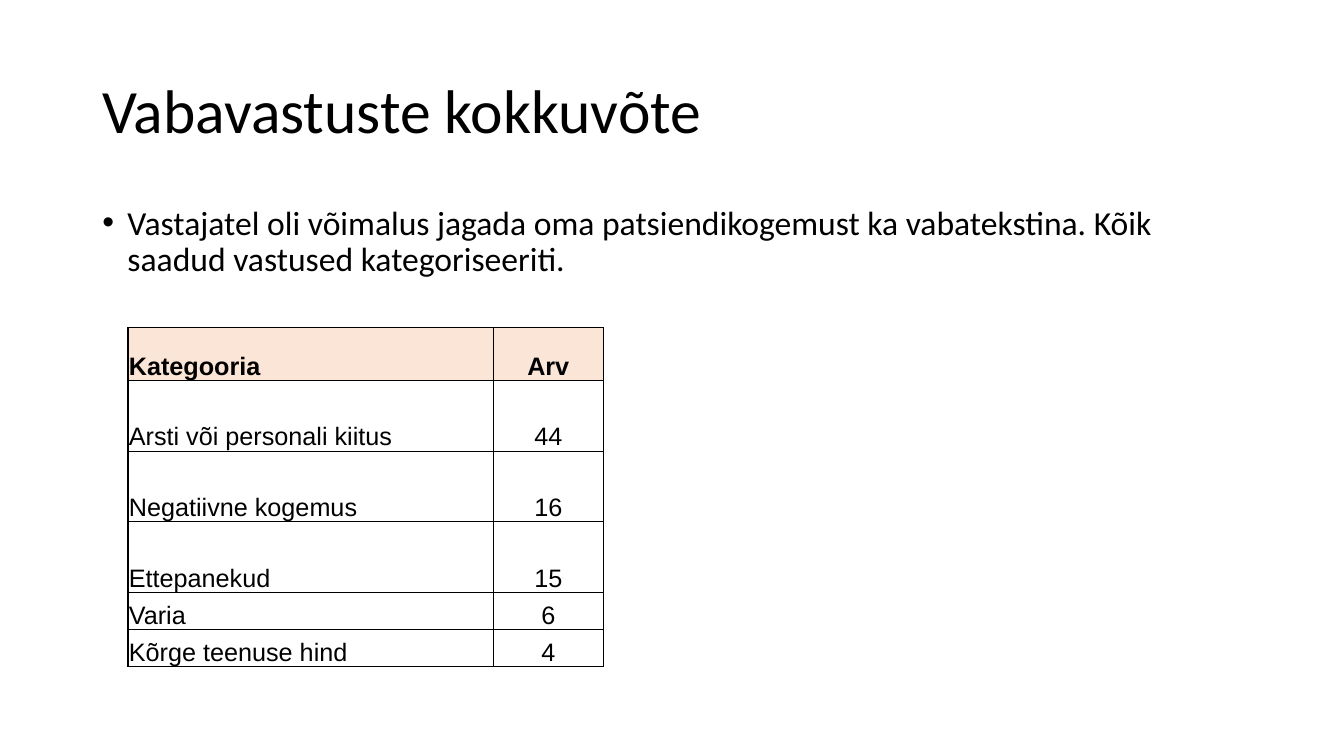
from lxml import etree
from pptx import Presentation
from pptx.dml.color import RGBColor
from pptx.enum.text import MSO_ANCHOR, PP_ALIGN
from pptx.oxml.ns import qn
from pptx.util import Pt

LEFT, CENTER = PP_ALIGN.LEFT, PP_ALIGN.CENTER
TOP, MIDDLE, BOTTOM = MSO_ANCHOR.TOP, MSO_ANCHOR.MIDDLE, MSO_ANCHOR.BOTTOM

COLORS = {"text": "000000", "border": "000000", "header": "FBE5D6"}
ROWS = [
    ("Kategooria", "Arv"),
    ("Arsti või personali kiitus", "44"),
    ("Negatiivne kogemus", "16"),
    ("Ettepanekud", "15"),
    ("Varia", "6"),
    ("Kõrge teenuse hind", "4"),
]
COLUMN_WIDTHS = [261, 78.5]
ROW_HEIGHTS = [38, 50.4, 50.4, 50.4, 26.5, 26.5]


class SlideBuilder:
    text_font = "Calibri"
    table_font = "Arial"
    table_size = 18

    def __init__(self, prs):
        self.s = prs.slides.add_slide(prs.slide_layouts[6])

    def style(self, p, font, size, bold=False):
        for r in p.runs:
            r.font.name = font
            r.font.size = Pt(size)
            r.font.bold = bold
            r.font.color.rgb = RGBColor.from_string(COLORS["text"])

    def text(self, text, left, top, width, height, size, anchor=TOP, bullet=False):
        sp = self.s.shapes.add_textbox(Pt(left), Pt(top), Pt(width), Pt(height))
        tf = sp.text_frame
        tf.word_wrap = True
        tf.vertical_anchor = anchor
        tf.text = text
        p = tf.paragraphs[0]
        if bullet:
            self.bullet(p)
        p.line_spacing = 0.9
        self.style(p, self.text_font, size)

    def bullet(self, p):
        pPr = p._p.get_or_add_pPr()
        pPr.set("marL", str(Pt(18)))
        pPr.set("indent", str(-Pt(18)))
        etree.SubElement(pPr, qn("a:buFont")).set("typeface", "Arial")
        etree.SubElement(pPr, qn("a:buChar")).set("char", "•")

    def table(self, rows, left, top, widths, heights):
        frame = self.s.shapes.add_table(
            len(rows), len(widths), Pt(left), Pt(top), Pt(sum(widths)), Pt(sum(heights)))
        table = frame.table
        for column, width in zip(table.columns, widths):
            column.width = Pt(width)
        for i, (values, height) in enumerate(zip(rows, heights)):
            table.rows[i].height = Pt(height)
            for j, value in enumerate(values):
                self.cell(table.cell(i, j), value, CENTER if j else LEFT, i == 0)

    def cell(self, cell, value, align, header):
        cell.margin_left = cell.margin_right = cell.margin_top = Pt(0.7)
        cell.margin_bottom = 0
        cell.vertical_anchor = BOTTOM
        self.borders(cell)
        if header:
            cell.fill.solid()
            cell.fill.fore_color.rgb = RGBColor.from_string(COLORS["header"])
        else:
            cell.fill.background()
        cell.text_frame.text = value
        p = cell.text_frame.paragraphs[0]
        p.alignment = align
        self.style(p, self.table_font, self.table_size, header)

    def borders(self, cell):
        tcPr = cell._tc.get_or_add_tcPr()
        for side in ("L", "R", "T", "B"):
            line = etree.SubElement(tcPr, qn("a:ln" + side))
            line.set("w", str(Pt(1)))
            fill = etree.SubElement(line, qn("a:solidFill"))
            etree.SubElement(fill, qn("a:srgbClr")).set("val", COLORS["border"])


def main():
    prs = Presentation()
    prs.slide_width, prs.slide_height = Pt(960), Pt(540)
    slide = SlideBuilder(prs)
    slide.text("Vabavastuste kokkuvõte", 66, 28.75, 828, 104.4, 44, anchor=MIDDLE)
    slide.text(
        "Vastajatel oli võimalus jagada oma patsiendikogemust ka vabatekstina. "
        "Kõik saadud vastused kategoriseeriti.",
        66, 143.75, 828, 342.6, 24, bullet=True)
    slide.table(ROWS, 91.4, 234, COLUMN_WIDTHS, ROW_HEIGHTS)
    prs.save("out.pptx")


if __name__ == "__main__":
    main()
